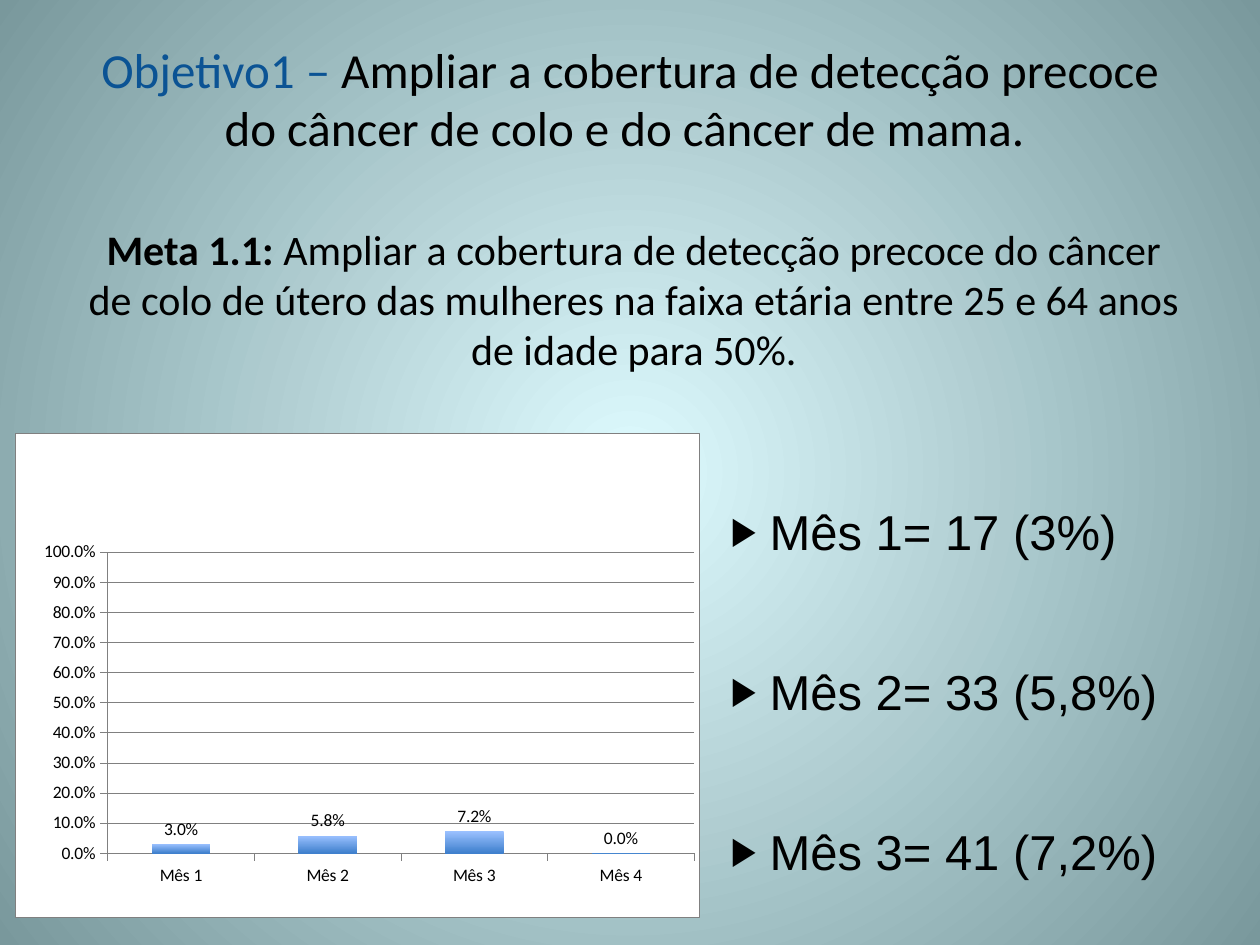
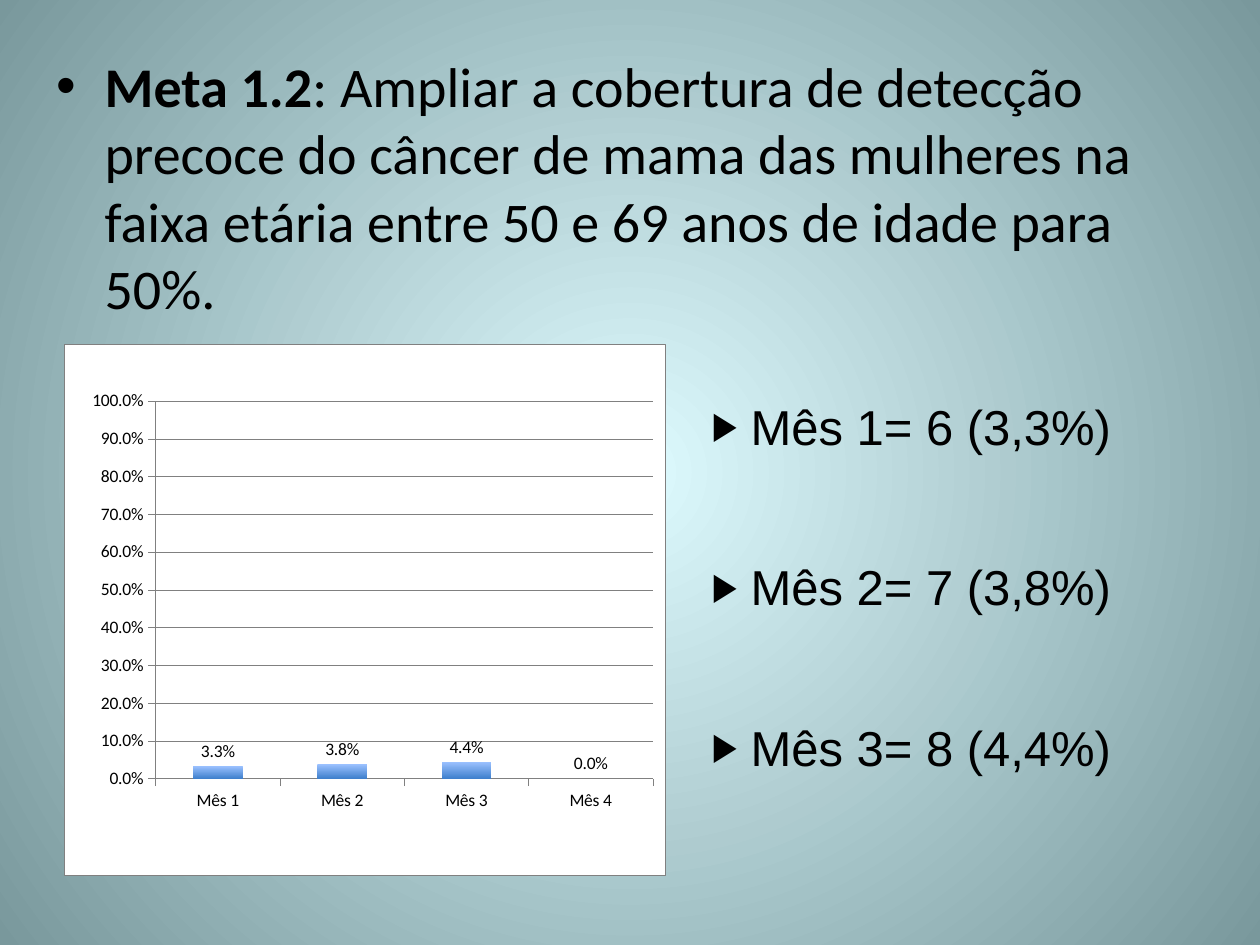
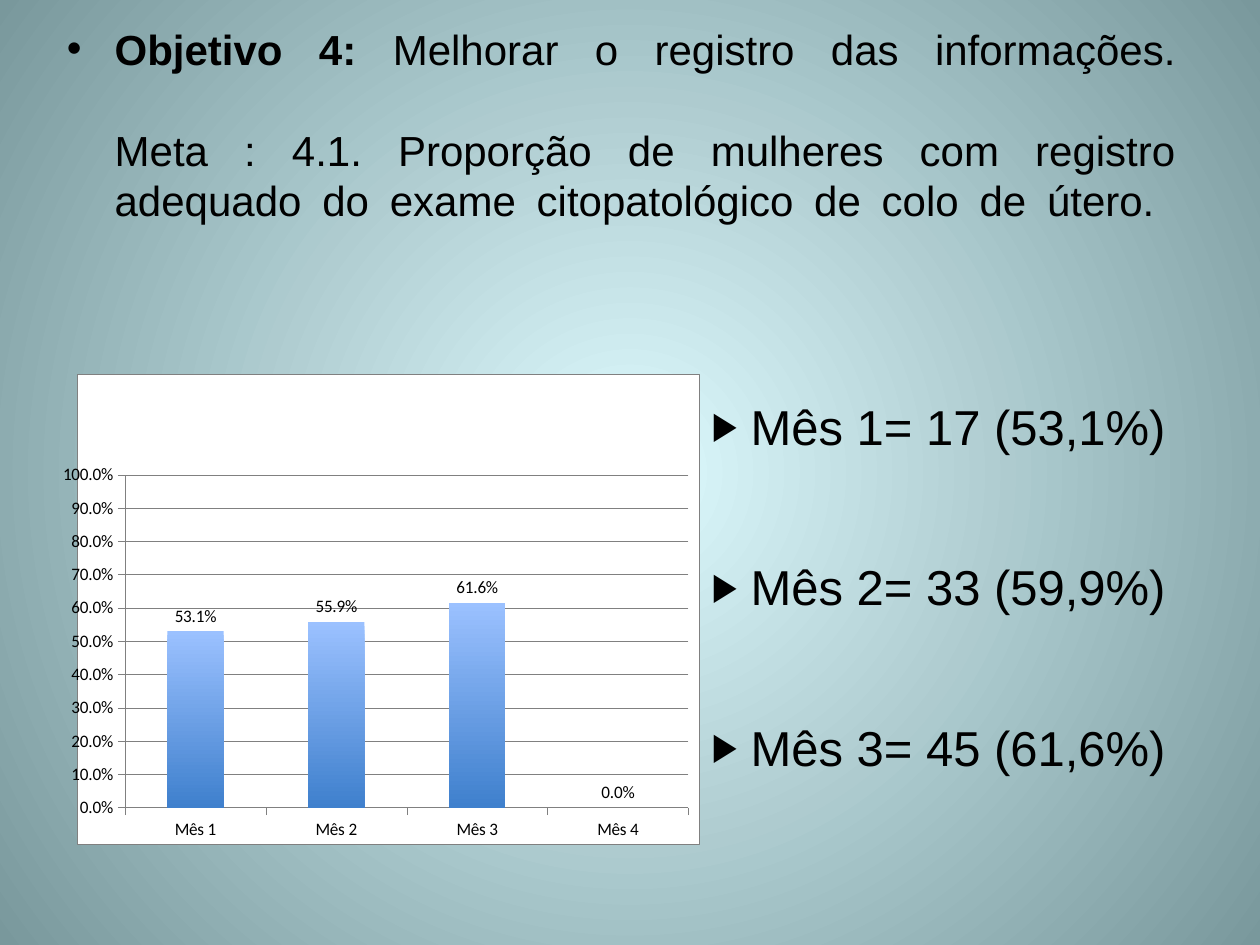
"""Build three slides on screening goals, each with a chart and a monthly list."""
from lxml import etree
from pptx import Presentation
from pptx.chart.data import CategoryChartData
from pptx.dml.color import RGBColor
from pptx.enum.chart import XL_CHART_TYPE, XL_LABEL_POSITION, XL_TICK_MARK
from pptx.enum.text import MSO_ANCHOR, MSO_AUTO_SIZE, PP_ALIGN
from pptx.oxml import parse_xml
from pptx.oxml.ns import nsdecls, qn
from pptx.util import Inches, Pt

BLACK = RGBColor(0x00, 0x00, 0x00)
BLUE = RGBColor(0x0B, 0x53, 0x94)
GREY = RGBColor(0x80, 0x80, 0x80)
WHITE = RGBColor(0xFF, 0xFF, 0xFF)
GLOW = RGBColor(0xDE, 0xFB, 0xFF)
EDGE = RGBColor(0x79, 0x98, 0x9C)
SKY = RGBColor(0x9B, 0xC1, 0xFF)
DEEP = RGBColor(0x3F, 0x80, 0xCD)

COLUMN = XL_CHART_TYPE.COLUMN_CLUSTERED
ABOVE = XL_LABEL_POSITION.OUTSIDE_END
OUT, NONE = XL_TICK_MARK.OUTSIDE, XL_TICK_MARK.NONE
BOTTOM = MSO_ANCHOR.BOTTOM
FIXED = MSO_AUTO_SIZE.NONE
CENTER, JUSTIFY = PP_ALIGN.CENTER, PP_ALIGN.JUSTIFY

SANS, ARIAL = "Calibri", "Arial"
RATE = "0.0%"
MONTHS = ["Mês 1", "Mês 2", "Mês 3", "Mês 4"]
LIST_BOX = (5.55, 2.49, 4.3, 4.17)


class Deck:
    """Hold the shared style and the current slide."""

    def __init__(self):
        self.prs = Presentation()
        self.prs.slide_width, self.prs.slide_height = Inches(10), Inches(7.5)
        master = self.prs.slide_master
        self.blend(master.background.fill, GLOW, EDGE)
        grad = master.element.find(".//" + qn("a:gradFill"))
        grad.remove(grad.find(qn("a:lin")))
        grad.append(parse_xml(
            f'<a:path {nsdecls("a")} path="circle">'
            '<a:fillToRect l="50000" t="50000" r="50000" b="50000"/></a:path>'))

    def blend(self, fill, start, end):
        fill.gradient()
        for stop, color in zip(fill.gradient_stops, (start, end)):
            stop.color.rgb = color

    def page(self):
        self.slide = self.prs.slides.add_slide(self.prs.slide_layouts[1])

    def prune(self):
        for shape in list(self.slide.placeholders):
            if not shape.text_frame.text:
                shape.element.getparent().remove(shape.element)

    def indent(self, para, left, first):
        props = para._p.get_or_add_pPr()
        props.set("marL", str(Inches(left)))
        props.set("indent", str(Inches(first)))
        return props

    def bullet(self, para, char, left, scale=100):
        props = self.indent(para, left, -left)
        color = etree.SubElement(props, qn("a:buClr"))
        etree.SubElement(color, qn("a:srgbClr"), val=str(BLACK))
        etree.SubElement(props, qn("a:buSzPct"), val=str(scale * 1000))
        etree.SubElement(props, qn("a:buFont"), typeface=ARIAL)
        etree.SubElement(props, qn("a:buChar"), char=char)

    def font(self, para, name, size):
        para.font.name, para.font.size = name, Pt(size)
        para.font.color.rgb = BLACK

    def holder(self, index, box, runs, name, size, align=None):
        shape = self.slide.placeholders[index]
        shape.left, shape.top, shape.width, shape.height = map(Inches, box)
        shape.text_frame.auto_size = FIXED
        para = shape.text_frame.paragraphs[0]
        para.alignment = align
        self.font(para, name, size)
        for text, bold, color in runs:
            for row, line in enumerate(text.split("\n")):
                if row:
                    para.add_line_break()
                if line:
                    run = para.add_run()
                    run.text = line
                    run.font.bold = bold
                    run.font.color.rgb = color
        return para

    def months(self, box, *items):
        frame = self.slide.shapes.add_textbox(*map(Inches, box)).text_frame
        frame.word_wrap = True
        frame.vertical_anchor = BOTTOM
        frame.margin_bottom = Inches(0.5)
        frame.text = "\n".join(items)
        for para in frame.paragraphs:
            para.space_before = Pt(58)
            self.font(para, ARIAL, 28)
            self.bullet(para, "▶", 0.31, 80)

    def line(self, format):
        format.line.color.rgb = GREY
        format.line.width = Pt(0.25)

    def chart(self, box, plot, values):
        data = CategoryChartData(number_format=RATE)
        data.categories = MONTHS
        data.add_series("Series 1", values)
        chart = self.slide.shapes.add_chart(
            COLUMN, *map(Inches, box), data).chart
        chart.has_title = chart.has_legend = False
        chart.font.name, chart.font.size = SANS, Pt(10)
        chart.font.color.rgb = BLACK
        for axis in (chart.category_axis, chart.value_axis):
            axis.major_tick_mark, axis.minor_tick_mark = OUT, NONE
            self.line(axis.format)
        axis.minimum_scale, axis.maximum_scale = 0, 1
        axis.major_unit = 0.1
        axis.has_major_gridlines = True
        self.line(axis.major_gridlines.format)
        axis.tick_labels.number_format = RATE
        axis.tick_labels.number_format_is_linked = False
        bars = chart.plots[0]
        bars.gap_width, bars.vary_by_categories = 150, False
        bars.has_data_labels = True
        labels = bars.data_labels
        labels.show_value, labels.position = True, ABOVE
        labels.number_format, labels.number_format_is_linked = RATE, False
        fill = bars.series[0].format.fill
        self.blend(fill, SKY, DEEP)
        fill.gradient_angle = 270
        self.frame(chart, plot)

    def frame(self, chart, plot):
        root = chart.element.find(qn("c:chart"))
        area = root.find(qn("c:plotArea"))
        for old in area.findall(qn("c:layout")):
            area.remove(old)
        modes = "".join(f'<c:{key}Mode val="edge"/>' for key in "xy")
        sizes = "".join(f'<c:{key} val="{val}"/>'
                        for key, val in zip("xywh", plot))
        area.insert(0, parse_xml(
            f'<c:layout {nsdecls("c")}><c:manualLayout>'
            f'<c:layoutTarget val="inner"/>{modes}{sizes}'
            '</c:manualLayout></c:layout>'))
        head = f'<c:spPr {nsdecls("c", "a")}>'
        white = f'<a:solidFill><a:srgbClr val="{WHITE}"/></a:solidFill>'
        grey = white.replace(str(WHITE), str(GREY))
        area.append(parse_xml(f"{head}{white}</c:spPr>"))
        root.addnext(parse_xml(
            f'{head}{white}<a:ln w="{Pt(0.25)}">{grey}</a:ln></c:spPr>'))


def main():
    deck = Deck()

    deck.page()
    deck.holder(0, (0.5, 0.47, 9, 1.08), [
        ("Objetivo1 – ", False, BLUE),
        ("Ampliar a cobertura de detecção precoce do câncer de colo "
         "e do câncer de mama. \n", False, BLACK)], SANS, 28, CENTER)
    goal = deck.holder(1, (0.47, 1.72, 9, 5.78), [
        ("Meta 1.1: ", True, BLACK),
        ("Ampliar a cobertura de detecção precoce do câncer de colo de útero "
         "das mulheres na faixa etária entre 25 e 64 anos de idade para 50%.",
         False, BLACK)], SANS, 24, CENTER)
    etree.SubElement(deck.indent(goal, 0.12, 0), qn("a:buNone"))
    deck.chart((0.12, 3.44, 5.43, 3.84), (0.135, 0.245, 0.858, 0.623),
               (0.03, 0.058, 0.072, 0))
    deck.months((5.7, 3.32, 4.3, 4.17), "Mês 1= 17 (3%)",
                "Mês 2= 33 (5,8%)", "Mês 3= 41 (7,2%)")

    deck.page()
    goal = deck.holder(1, (0.35, 0.36, 9.15, 7.14), [
        ("Meta 1.2", True, BLACK),
        (": Ampliar a cobertura de detecção precoce do câncer de mama das "
         "mulheres na faixa etária entre 50 e 69 anos de idade para 50%.",
         False, BLACK)], SANS, 32)
    deck.bullet(goal, "•", 0.38)
    deck.prune()
    deck.chart((0.51, 2.73, 4.77, 4.22), (0.152, 0.107, 0.828, 0.711),
               (0.033, 0.038, 0.044, 0))
    deck.months(LIST_BOX, "Mês 1= 6 (3,3%)", "Mês 2= 7 (3,8%)",
                "Mês 3= 8 (4,4%)")

    deck.page()
    goal = deck.holder(0, (0.43, 0.13, 9, 2.11), [
        ("Objetivo 4:", True, BLACK),
        (" Melhorar o registro das informações.\n\n"
         "Meta : 4.1. Proporção de mulheres com registro adequado do exame "
         "citopatológico de colo de útero. \n", False, BLACK)],
        ARIAL, 24, JUSTIFY)
    deck.bullet(goal, "•", 0.38)
    deck.prune()
    deck.chart((0.5, 2.97, 5.05, 3.73), (0.077, 0.214, 0.906, 0.709),
               (0.531, 0.559, 0.616, 0))
    deck.months(LIST_BOX, "Mês 1= 17 (53,1%)", "Mês 2= 33 (59,9%)",
                "Mês 3= 45 (61,6%)")

    deck.prs.save("out.pptx")


if __name__ == "__main__":
    main()
